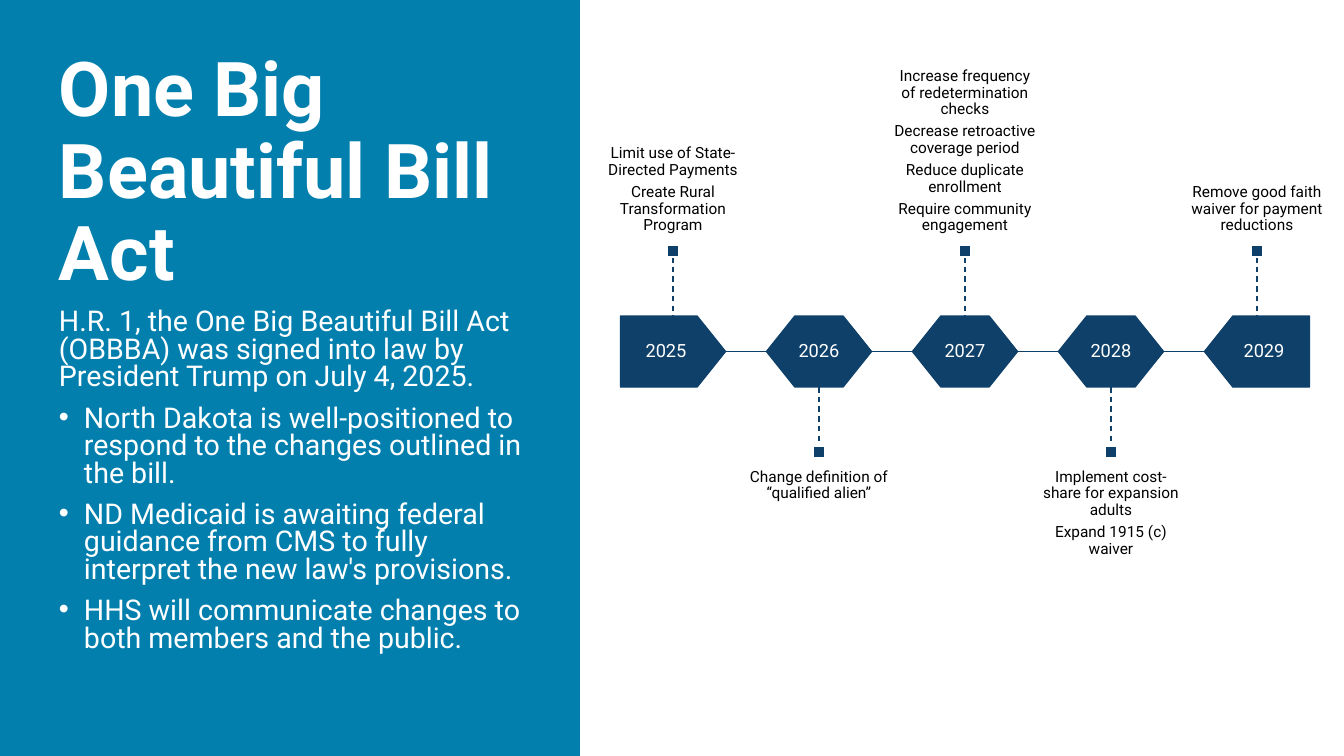
from dataclasses import dataclass

from lxml import etree
from pptx import Presentation
from pptx.dml.color import RGBColor
from pptx.enum.dml import MSO_LINE
from pptx.enum.shapes import MSO_CONNECTOR, MSO_SHAPE
from pptx.enum.text import MSO_ANCHOR, PP_ALIGN
from pptx.oxml.ns import qn
from pptx.util import Emu, Pt

TITLE = "One Big Beautiful Bill Act"
INTRO = ("H.R. 1, the One Big Beautiful Bill Act (OBBBA) was signed into law "
         "by President Trump on July 4, 2025.")
BULLETS = [
    "North Dakota is well-positioned to respond to the changes outlined in the bill.",
    "ND Medicaid is awaiting federal guidance from CMS to fully interpret the new law's provisions.",
    "HHS will communicate changes to both members and the public.",
]
MILESTONES = [
    ("2025", ["Limit use of State-Directed Payments",
              "Create Rural Transformation Program"]),
    ("2026", ["Change definition of “qualified alien”"]),
    ("2027", ["Increase frequency of redetermination checks",
              "Decrease retroactive coverage period",
              "Reduce duplicate enrollment",
              "Require community engagement"]),
    ("2028", ["Implement cost-share for expansion adults",
              "Expand 1915 (c) waiver"]),
    ("2029", ["Remove good faith waiver for payment reductions"]),
]


@dataclass(frozen=True)
class Theme:
    font: str = "Roboto"
    panel: RGBColor = RGBColor(0x03, 0x7F, 0xAE)
    navy: RGBColor = RGBColor(0x0E, 0x40, 0x6A)
    white: RGBColor = RGBColor(0xFF, 0xFF, 0xFF)
    black: RGBColor = RGBColor(0, 0, 0)
    title_size: float = 54
    body_size: float = 20.4
    year_size: float = 13
    note_size: float = 11


THEME = Theme()
RECTANGLE, HEXAGON, PENTAGON = MSO_SHAPE.RECTANGLE, MSO_SHAPE.HEXAGON, MSO_SHAPE.PENTAGON
STRAIGHT, DASH = MSO_CONNECTOR.STRAIGHT, MSO_LINE.DASH
TOP, MIDDLE, BOTTOM = MSO_ANCHOR.TOP, MSO_ANCHOR.MIDDLE, MSO_ANCHOR.BOTTOM
LEFT, CENTER = PP_ALIGN.LEFT, PP_ALIGN.CENTER

SLIDE_WIDTH, SLIDE_HEIGHT, PANEL_WIDTH = 1344, 756, 580
TEXT_LEFT, TEXT_WIDTH = 49, 484
FIRST_CENTER, PITCH = 673, 146
BADGE_TOP, BADGE_WIDTH, BADGE_HEIGHT = 316, 105, 71
END_LABEL_WIDTH, STEM, MARKER, NOTE_HEIGHT, INSET = 91, 59, 12, 190, 11


def px(value):
    return Emu(round(value * 914400 / 100.8))


def add_block(slide, kind, left, top, width, height, fill, line=None):
    shape = slide.shapes.add_shape(kind, px(left), px(top), px(width), px(height))
    shape.shadow.inherit = False
    shape.fill.solid()
    shape.fill.fore_color.rgb = fill
    if line is None:
        shape.line.fill.background()
    else:
        shape.line.color.rgb = line
        shape.line.width = Pt(1)
    return shape


def add_line(slide, x1, y1, x2, y2, dash=None):
    connector = slide.shapes.add_connector(STRAIGHT, px(x1), px(y1), px(x2), px(y2))
    connector.line.color.rgb = THEME.navy
    connector.line.width = Pt(1)
    if dash is not None:
        connector.line.dash_style = dash
    properties = connector._element.find(qn("p:spPr"))
    etree.SubElement(properties, qn("a:effectLst"))


def add_text(slide, box, texts, size, color, anchor, align=LEFT, spacing=0.9,
             before=0, after=0, insets=(10, 5), bold=False, bullets_from=None):
    frame = slide.shapes.add_textbox(*map(px, box)).text_frame
    frame.word_wrap = True
    frame.vertical_anchor = anchor
    frame.margin_left = frame.margin_right = px(insets[0])
    frame.margin_top = frame.margin_bottom = px(insets[1])
    for index, text in enumerate(texts):
        paragraph = frame.add_paragraph() if index else frame.paragraphs[0]
        paragraph.text = text
        paragraph.alignment = align
        paragraph.line_spacing = spacing
        paragraph.space_before = Pt(before if index else 0)
        paragraph.space_after = Pt(after)
        if bullets_from is not None and index >= bullets_from:
            properties = paragraph._p.get_or_add_pPr()
            properties.set("marL", str(px(25)))
            properties.set("indent", str(-px(25)))
            etree.SubElement(properties, qn("a:buFont"), typeface="Arial")
            etree.SubElement(properties, qn("a:buChar"), char="•")
        paragraph.font.name = THEME.font
        paragraph.font.size = Pt(size)
        paragraph.font.bold = bold
        paragraph.font.color.rgb = color


def add_panel(slide):
    add_block(slide, RECTANGLE, 0, 0, PANEL_WIDTH, SLIDE_HEIGHT, THEME.panel)
    add_text(slide, (TEXT_LEFT, 43, TEXT_WIDTH, 262), [TITLE],
             THEME.title_size, THEME.white, MIDDLE, bold=True)
    add_text(slide, (TEXT_LEFT, 305, TEXT_WIDTH, 396), [INTRO, *BULLETS],
             THEME.body_size, THEME.white, TOP, spacing=0.8, before=10, bullets_from=1)


def add_milestone(slide, index, year, notes):
    last = len(MILESTONES) - 1
    center = FIRST_CENTER + index * PITCH
    left = center - BADGE_WIDTH / 2
    right = left + BADGE_WIDTH
    badge_bottom = BADGE_TOP + BADGE_HEIGHT

    kind = PENTAGON if index in (0, last) else HEXAGON
    badge = add_block(slide, kind, left, BADGE_TOP, BADGE_WIDTH, BADGE_HEIGHT,
                      THEME.navy, THEME.navy)
    badge.adjustments[0] = 0.4
    label_left, label_width = left, BADGE_WIDTH
    if kind == PENTAGON:
        label_width = END_LABEL_WIDTH
    if index == last:
        badge.rotation = 180
        label_left = right - label_width
    else:
        middle = BADGE_TOP + BADGE_HEIGHT / 2
        add_line(slide, right, middle, left + PITCH, middle)
    add_text(slide, (label_left, BADGE_TOP, label_width, BADGE_HEIGHT), [year],
             THEME.year_size, THEME.white, MIDDLE, CENTER, insets=(INSET, INSET))

    if index % 2 == 0:
        stem_top = BADGE_TOP - STEM
        marker_top = stem_top - MARKER
        note_top, anchor = marker_top - NOTE_HEIGHT, BOTTOM
    else:
        stem_top = badge_bottom
        marker_top = stem_top + STEM
        note_top, anchor = marker_top + MARKER, TOP
    add_line(slide, center, stem_top, center, stem_top + STEM, DASH)
    add_block(slide, RECTANGLE, center - MARKER / 2, marker_top, MARKER, MARKER,
              THEME.navy, THEME.white)
    add_text(slide, (center - PITCH / 2, note_top, PITCH, NOTE_HEIGHT), notes,
             THEME.note_size, THEME.black, anchor, CENTER,
             after=THEME.note_size * 0.35, insets=(0, INSET))


def main():
    presentation = Presentation()
    presentation.slide_width = px(SLIDE_WIDTH)
    presentation.slide_height = px(SLIDE_HEIGHT)
    slide = presentation.slides.add_slide(presentation.slide_layouts[6])
    add_panel(slide)
    for index, (year, notes) in enumerate(MILESTONES):
        add_milestone(slide, index, year, notes)
    presentation.save("out.pptx")


if __name__ == "__main__":
    main()
